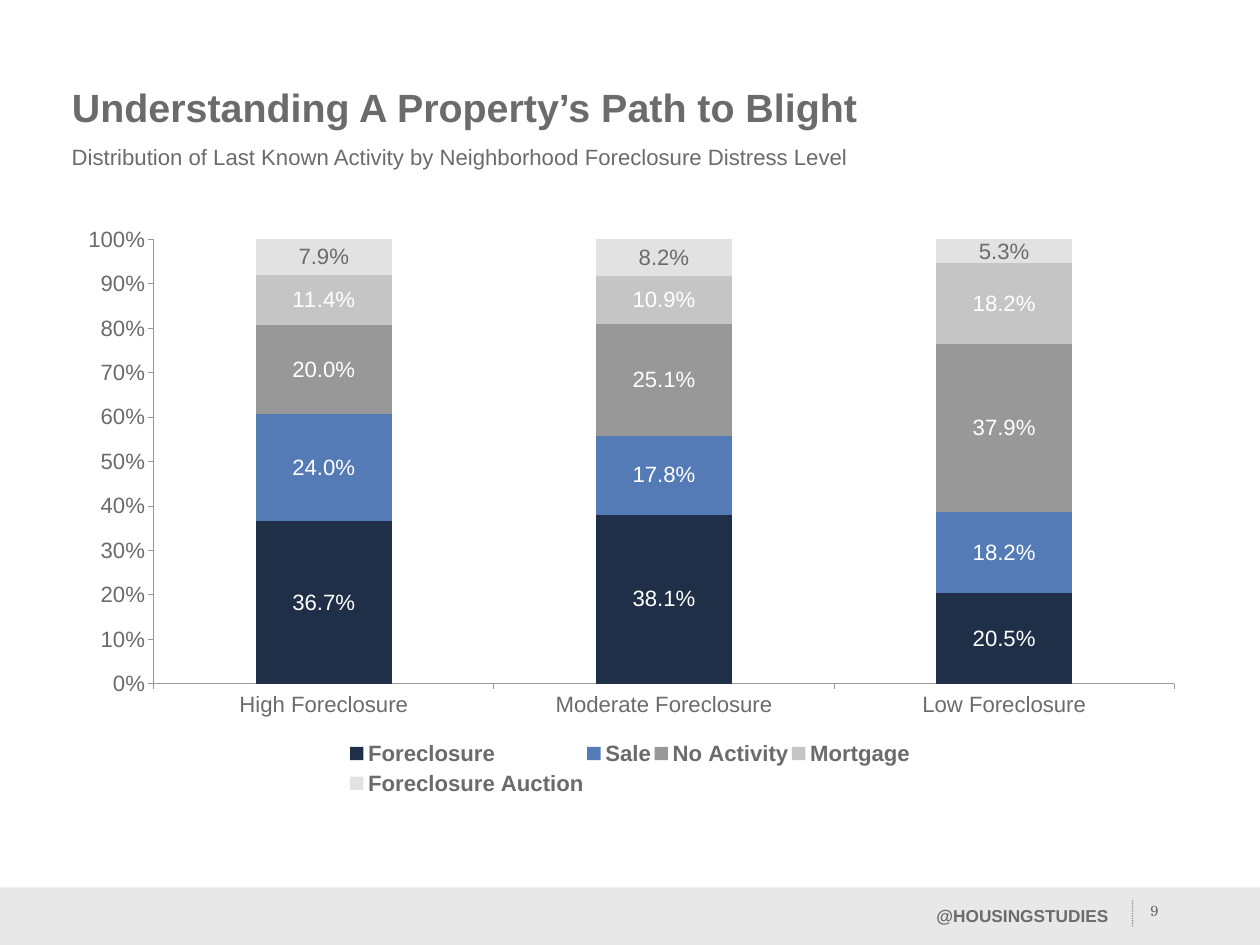
from lxml.etree import SubElement
from pptx import Presentation
from pptx.chart.data import CategoryChartData
from pptx.dml.color import RGBColor
from pptx.enum.chart import XL_CHART_TYPE as ChartType, XL_LEGEND_POSITION as LegendPos
from pptx.enum.chart import XL_TICK_MARK as Tick
from pptx.enum.dml import MSO_LINE_DASH_STYLE as Dash
from pptx.enum.shapes import MSO_CONNECTOR as Connector, MSO_SHAPE as Shape
from pptx.enum.text import MSO_ANCHOR as Anchor, PP_ALIGN as Align
from pptx.oxml import parse_xml
from pptx.oxml.ns import nsdecls, qn
from pptx.util import Inches, Pt

WIDTH, HEIGHT = 14.22, 10.67
MARGIN = WIDTH * 0.05
CONTENT_W = WIDTH * 0.9
FOOTER_TOP = 10.02
COLORS = {"text": "6B6B6B", "footer": "E8E8E8", "white": "FFFFFF"}
CATEGORIES = ["High Foreclosure", "Moderate Foreclosure", "Low Foreclosure"]
# Name, values, fill, label colour
SERIES = [
    ("Foreclosure", (0.367, 0.381, 0.205), "1F2F47", "white"),
    ("Sale", (0.24, 0.178, 0.182), "547BB6", "white"),
    ("No Activity", (0.2, 0.251, 0.379), "989898", "white"),
    ("Mortgage", (0.114, 0.109, 0.182), "C5C5C5", "white"),
    ("Foreclosure Auction", (0.079, 0.082, 0.053), "E2E2E2", "text"),
]


def rgb(name):
    return RGBColor.from_string(COLORS.get(name, name))


def place(sp, left, top, width, height):
    sp.left, sp.top = Inches(left), Inches(top)
    sp.width, sp.height = Inches(width), Inches(height)


def style_font(font, size, color="text", bold=False, name="Arial"):
    font.name, font.size, font.bold = name, Pt(size), bold
    font.color.rgb = rgb(color)


def write(sp, text, size, align=Align.LEFT, anchor=Anchor.TOP, inset=None,
          spacing=None, **font):
    tf = sp.text_frame
    tf.word_wrap, tf.vertical_anchor = True, anchor
    if inset is not None:
        tf.margin_left = tf.margin_right = Inches(inset)
        tf.margin_top = tf.margin_bottom = Inches(inset)
    p = tf.paragraphs[0]
    p.alignment, p.line_spacing = align, spacing
    r = p.add_run()
    r.text = text
    style_font(r.font, size, **font)


def add_text(s, box, text, size, **options):
    sp = s.shapes.add_textbox(*map(Inches, box))
    write(sp, text, size, **options)


def add_footer(s):
    band = s.shapes.add_shape(Shape.RECTANGLE, 0, Inches(FOOTER_TOP),
                              Inches(WIDTH), Inches(HEIGHT - FOOTER_TOP))
    band.shadow.inherit = False
    band.fill.solid()
    band.fill.fore_color.rgb = rgb("footer")
    band.line.fill.background()

    x = Inches(12.78)
    divider = s.shapes.add_connector(Connector.STRAIGHT, x, Inches(10.17), x, Inches(10.46))
    divider.line.color.rgb = rgb("text")
    divider.line.width = Pt(1)
    divider.line.dash_style = Dash.ROUND_DOT
    sp_pr = divider.line._get_or_add_ln().getparent()
    SubElement(sp_pr, qn("a:effectLst"))
    color = next(sp_pr.iter(qn("a:srgbClr")))
    SubElement(color, qn("a:alpha")).set("val", "75000")

    add_text(s, (9.29, 10.14, 3.32, 0.4), "@HOUSINGSTUDIES", 14, bold=True,
             align=Align.RIGHT, anchor=Anchor.MIDDLE)
    add_text(s, (12.85, 9.81, 0.36, 0.57), "9", 12, name="TeX Gyre Schola",
             align=Align.CENTER, anchor=Anchor.BOTTOM, inset=0, spacing=1.5)


def layout_xml(x, y, w, h, inner=False):
    target = '<c:layoutTarget val="inner"/>' if inner else ""
    return parse_xml(
        f'<c:layout {nsdecls("c")}><c:manualLayout>{target}'
        '<c:xMode val="edge"/><c:yMode val="edge"/>'
        f'<c:x val="{x}"/><c:y val="{y}"/><c:w val="{w}"/><c:h val="{h}"/>'
        '</c:manualLayout></c:layout>')


def set_layout(parent, layout, before):
    for old in parent.findall(qn("c:layout")):
        parent.remove(old)
    parent.insert(before, layout)


def style_axis(axis):
    axis.has_major_gridlines = False
    axis.major_tick_mark, axis.minor_tick_mark = Tick.OUTSIDE, Tick.NONE
    axis.format.line.color.rgb = rgb("989898")
    axis.format.line.width = Pt(0.75)
    style_font(axis.tick_labels.font, 18)


def add_activity_chart(s, box):
    data = CategoryChartData(number_format="0.0%")
    data.categories = CATEGORIES
    for name, values, *_ in SERIES:
        data.add_series(name, values)
    chart = s.shapes.add_chart(ChartType.COLUMN_STACKED_100, *map(Inches, box), data).chart
    style_font(chart.font, 10)
    chart.has_title = False

    # Axes
    style_axis(chart.category_axis)
    value_axis = chart.value_axis
    style_axis(value_axis)
    value_axis.minimum_scale, value_axis.maximum_scale, value_axis.major_unit = 0, 1, 0.1
    value_axis.tick_labels.number_format = "0%"
    value_axis.tick_labels.number_format_is_linked = False

    # Columns and their labels
    plot = chart.plots[0]
    plot.gap_width, plot.overlap, plot.vary_by_categories = 150, 100, False
    for series, (_, _, fill, label_color) in zip(plot.series, SERIES):
        series.format.fill.solid()
        series.format.fill.fore_color.rgb = rgb(fill)
        labels = series.data_labels
        labels.show_value = True
        labels.number_format, labels.number_format_is_linked = "0.0%", False
        style_font(labels.font, 18, label_color)

    # Legend in two rows
    chart.has_legend = True
    legend = chart.legend
    legend.position, legend.include_in_layout = LegendPos.BOTTOM, False
    style_font(legend.font, 18, bold=True)
    root = plot._element.getparent()
    set_layout(root, layout_xml(0.08, 0.04, 0.9, 0.76, inner=True), 0)
    set_layout(legend._element, layout_xml(0.25, 0.89, 0.5, 0.11), 1)


def main():
    prs = Presentation()
    prs.slide_width, prs.slide_height = Inches(WIDTH), Inches(HEIGHT)
    s = prs.slides.add_slide(prs.slide_layouts[5])

    add_footer(s)

    # Heading
    place(s.shapes.title, MARGIN, 0.83, CONTENT_W, 0.74)
    write(s.shapes.title, "Understanding A Property’s Path to Blight", 32,
          bold=True, anchor=Anchor.MIDDLE)
    add_text(s, (MARGIN, 1.57, CONTENT_W, 0.58),
             "Distribution of Last Known Activity by Neighborhood Foreclosure Distress Level", 18)

    add_activity_chart(s, (MARGIN, 2.44, CONTENT_W, 6.6))
    prs.save("out.pptx")


if __name__ == "__main__":
    main()
